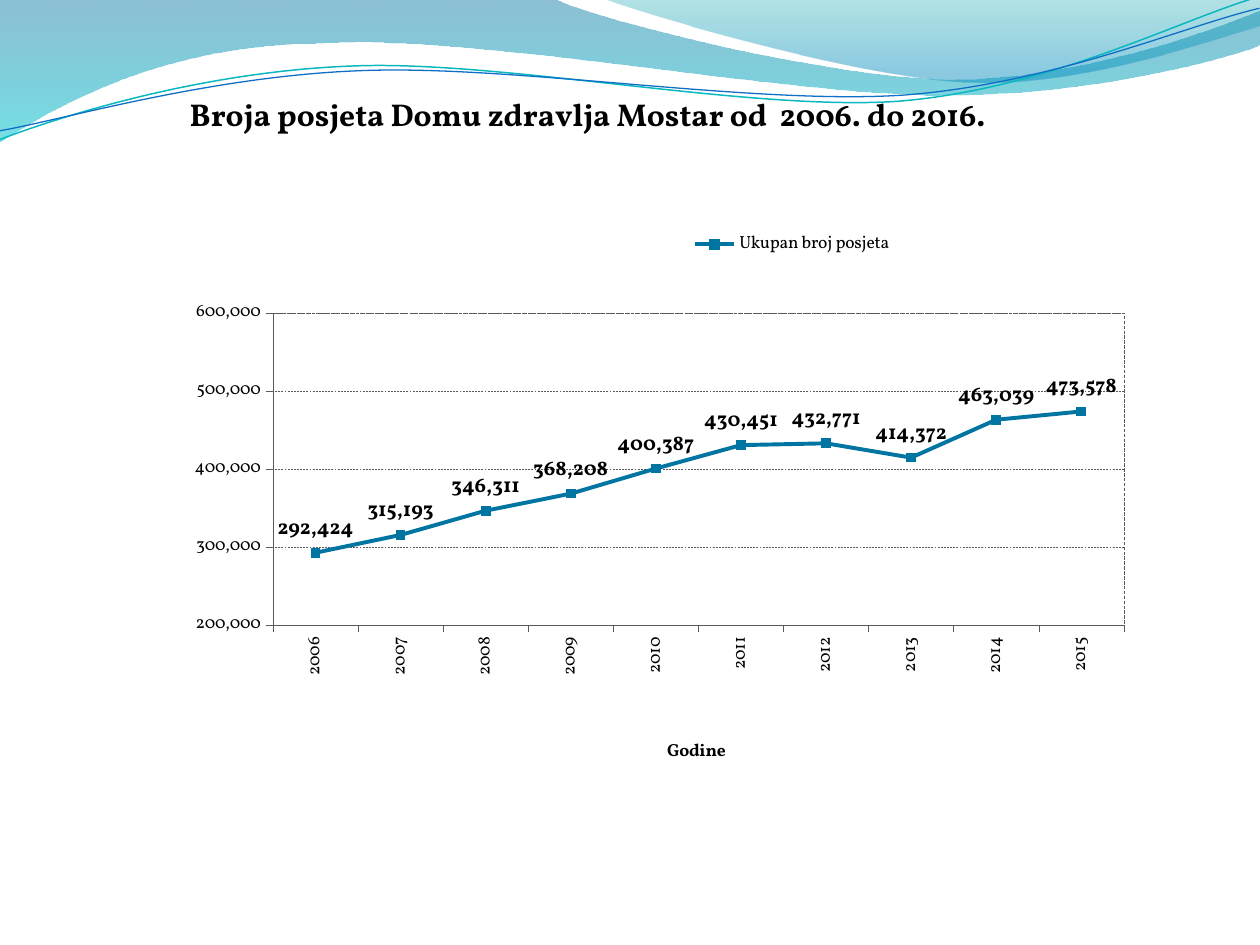
"""Build the slide on visits to the Mostar health centre."""
import lxml.etree
import pptx
import pptx.chart.data
import pptx.dml.color
import pptx.enum.chart
import pptx.enum.dml
import pptx.oxml
import pptx.oxml.ns
import pptx.util

SCALE = 914400 / 126
FONT = "Vollkorn"
CHART_BOX = (0, 55, 1260, 784)
COLORS = {
    "text": "000000", "axis": "595959", "series": "0075A2",
    "teal_line": "0AB8BF", "blue_line": "0F6FC6",
    "deep": "0074A1", "aqua": "00C6CF", "sea": "00A1A9", "sky": "008BBF",
}
VISITS = {
    "2006": 292424, "2007": 315193, "2008": 346311, "2009": 368208,
    "2010": 400387, "2011": 430451, "2012": 432771, "2013": 414372,
    "2014": 463039, "2015": 473578,
}
LEFT_WAVE = [
    [(0, -1)], [(554, -1)],
    [(600, 21), (837, 79), (955, 79)], [(1074, 79), (1207, 33), (1260, 11)],
    [(1261, 45)],
    [(1239, 55), (1096, 96), (940, 95)], [(783, 95), (481, 35), (324, 43)],
    [(163, 44), (58, 105), (-1, 142)], [(0, -1)],
]
RIGHT_WAVE = [
    [(604, -1)],
    [(641, 14), (859, 78), (969, 82)], [(1079, 87), (1211, 40), (1260, 26)],
    [(1260, 0)], [(604, -1)],
]
TEAL_CURVE = [
    [(-3, 110)], [(58, 90), (199, 52), (350, 53)],
    [(499, 53), (745, 117), (896, 114)], [(1048, 109), (1184, 45), (1260, 27)],
]
BLUE_CURVE = [
    [(-2, 101)], [(57, 94), (207, 57), (357, 58)],
    [(508, 58), (750, 111), (902, 108)], [(1052, 104), (1186, 52), (1262, 38)],
]


def px(n):
    """Turn pixels into EMU."""
    return pptx.util.Emu(round(n * SCALE))


def rgb(name):
    """Return a named colour."""
    return pptx.dml.color.RGBColor.from_string(COLORS[name])


def add_outline(slide, segments, close):
    """Add a freeform of straight and cubic segments."""
    points = [(px(x), px(y)) for segment in segments for x, y in segment]
    builder = slide.shapes.build_freeform(*points[0])
    builder.add_line_segments(points[1:], close=close)
    sp = builder.convert_to_shape()
    sp.shadow.inherit = False
    lines = iter(sp._element.findall(".//" + pptx.oxml.ns.qn("a:lnTo")))
    for segment in segments[1:]:
        parts = [next(lines) for _ in segment]
        if len(parts) == 3:
            curve = lxml.etree.Element(pptx.oxml.ns.qn("a:cubicBezTo"))
            parts[0].addprevious(curve)
            for part in parts:
                curve.append(part[0])
                part.getparent().remove(part)
    return sp


def add_wave(slide, segments, stops):
    """Add a wave with a translucent downward gradient."""
    sp = add_outline(slide, segments, True)
    sp.line.fill.background()
    sp.fill.gradient()
    sp.fill.gradient_angle = 270
    stop_list = sp.fill._fill._gradFill.find(pptx.oxml.ns.qn("a:gsLst"))
    for old in list(stop_list):
        stop_list.remove(old)
    for position, color, alpha in stops:
        gs = lxml.etree.SubElement(stop_list, pptx.oxml.ns.qn("a:gs"), pos=str(position * 1000))
        clr = lxml.etree.SubElement(gs, pptx.oxml.ns.qn("a:srgbClr"), val=COLORS[color])
        lxml.etree.SubElement(clr, pptx.oxml.ns.qn("a:alpha"), val=str(alpha * 1000))


def add_curve(slide, segments, color, width):
    """Add an open, slightly turned curve."""
    sp = add_outline(slide, segments, False)
    sp.rotation = 357.3
    sp.fill.background()
    style_line(sp.line, color, width)


def style_line(line, color, width, dash=None):
    """Set colour, width and dash of a line."""
    line.color.rgb = rgb(color)
    line.width = pptx.util.Pt(width)
    line.dash_style = dash


def style_font(font, size, bold=False):
    """Set the face, size, weight and colour of a font."""
    font.name = FONT
    font.size = pptx.util.Pt(size)
    font.bold = bold
    font.color.rgb = rgb("text")


def set_layout(element, x, y, w=None, h=None, inner=False):
    """Place a chart part, given in slide pixels."""
    for old in element.findall(pptx.oxml.ns.qn("c:layout")):
        element.remove(old)
    left, top, width, height = CHART_BOX
    layout = pptx.oxml.parse_xml(f"<c:layout {pptx.oxml.ns.nsdecls('c')}><c:manualLayout/></c:layout>")
    values = [("layoutTarget", "inner")] if inner else []
    values += [("xMode", "edge"), ("yMode", "edge")]
    values += [("x", (x - left) / width), ("y", (y - top) / height)]
    values += [("w", w / width), ("h", h / height)] if w else []
    for tag, value in values:
        lxml.etree.SubElement(layout[0], pptx.oxml.ns.qn(f"c:{tag}"), val=str(value))
    before = [e for e in element if e.tag in map(pptx.oxml.ns.qn, ("c:tx", "c:legendPos"))]
    element.insert(element.index(before[-1]) + 1 if before else 0, layout)


def set_title(title, text, size, x, y):
    """Write and place a chart or axis title."""
    tf = title.text_frame
    tf.text = text
    style_font(tf.paragraphs[0].runs[0].font, size, True)
    set_layout(title._element, x, y)


def style_axes(chart):
    """Format both axes and the gridlines."""
    for axis in (chart.category_axis, chart.value_axis):
        axis.major_tick_mark = pptx.enum.chart.XL_TICK_MARK.OUTSIDE
        style_font(axis.tick_labels.font, 10)
        style_line(axis.format.line, "axis", 0.25)
    years, visits = chart.category_axis, chart.value_axis
    years._element.txPr.bodyPr.set("rot", "-5400000")
    set_title(years.axis_title, "Godine", 10, 664, 735)
    visits.minimum_scale, visits.maximum_scale = 200000, 600000
    visits.major_unit = 100000
    visits.tick_labels.number_format = "#,##0"
    visits.tick_labels.number_format_is_linked = False
    style_line(visits.major_gridlines.format.line, "axis", 0.25,
               pptx.enum.dml.MSO_LINE.DASH)


def style_series(series):
    """Format the line, its markers and its labels."""
    series.smooth = False
    style_line(series.format.line, "series", 2.25)
    marker = series.marker
    marker.style = pptx.enum.chart.XL_MARKER_STYLE.SQUARE
    marker.size = 5
    marker.format.fill.solid()
    marker.format.fill.fore_color.rgb = rgb("series")
    marker.format.line.color.rgb = rgb("series")
    labels = series.data_labels
    labels.show_value = True
    labels.position = pptx.enum.chart.XL_LABEL_POSITION.ABOVE
    labels.number_format = "#,##0"
    labels.number_format_is_linked = False
    style_font(labels.font, 12, True)


def add_visits_chart(slide):
    """Add the line chart of yearly visits."""
    data = pptx.chart.data.CategoryChartData(number_format="#,##0")
    data.categories = list(VISITS)
    data.add_series("Ukupan broj posjeta", list(VISITS.values()))
    kind = pptx.enum.chart.XL_CHART_TYPE.LINE_MARKERS_STACKED
    chart = slide.shapes.add_chart(kind, *map(px, CHART_BOX), data).chart
    style_font(chart.font, 10)
    set_title(chart.chart_title, "Broja posjeta Domu zdravlja Mostar od  2006. do 2016.", 18, 184, 87)
    chart.has_legend = True
    chart.legend.position = pptx.enum.chart.XL_LEGEND_POSITION.TOP
    chart.legend.include_in_layout = False
    style_font(chart.legend.font, 10)
    set_layout(chart.legend._element, 691, 229, 202, 31)
    plot = chart.plots[0]
    plot.vary_by_categories = False
    style_axes(chart)
    style_series(plot.series[0])
    area = chart._chartSpace.chart.plotArea
    set_layout(area, 273, 313, 851, 312, True)
    area.append(pptx.oxml.parse_xml(
        f"<c:spPr {pptx.oxml.ns.nsdecls('c', 'a')}><a:noFill/><a:ln w='3175'><a:solidFill>"
        f"<a:srgbClr val='{COLORS['axis']}'/></a:solidFill><a:prstDash val='lgDash'/></a:ln></c:spPr>"))


def main():
    """Build and save the slide."""
    prs = pptx.Presentation()
    prs.slide_width, prs.slide_height = px(1260), px(945)
    slide = prs.slides.add_slide(prs.slide_layouts[6])
    add_wave(slide, LEFT_WAVE, [(0, "deep", 45), (100, "aqua", 55)])
    add_wave(slide, RIGHT_WAVE, [(0, "sea", 30), (80, "sky", 45)])
    add_curve(slide, TEAL_CURVE, "teal_line", 0.85)
    add_curve(slide, BLUE_CURVE, "blue_line", 0.75)
    add_visits_chart(slide)
    prs.save("out.pptx")


if __name__ == "__main__":
    main()
